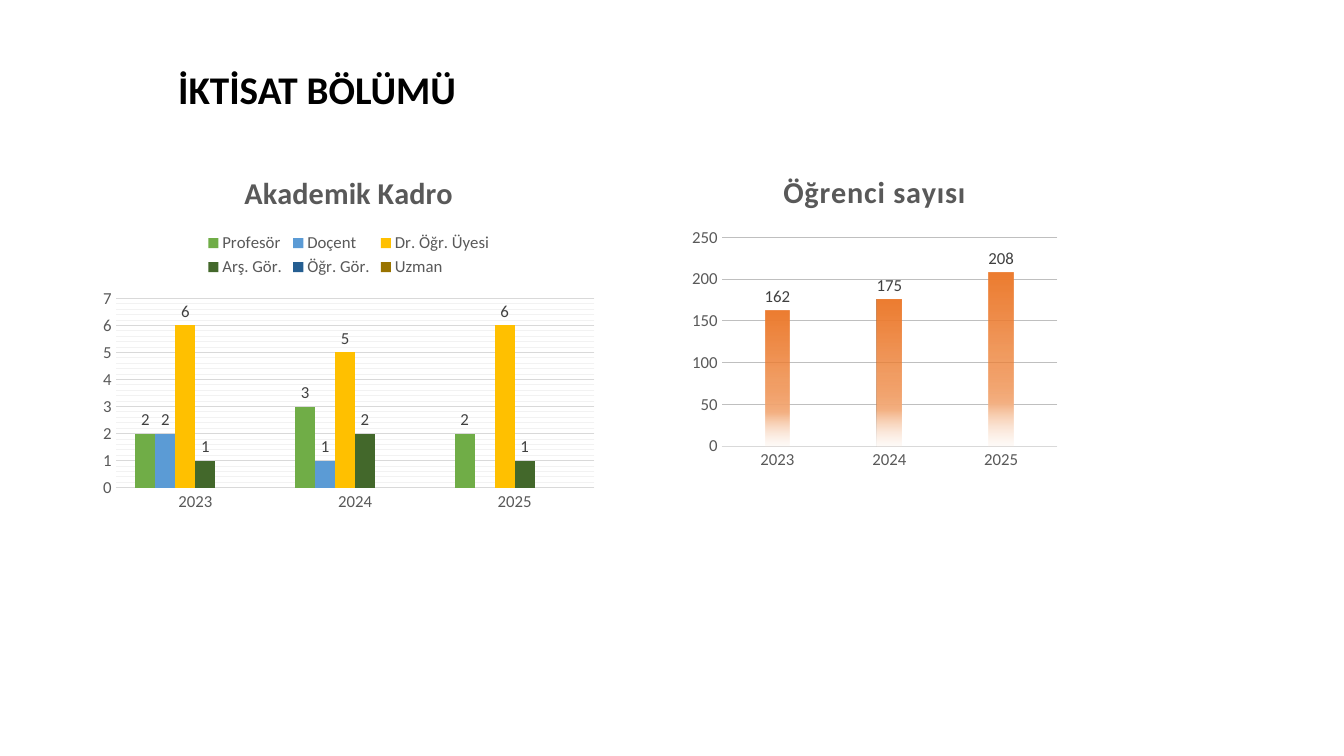
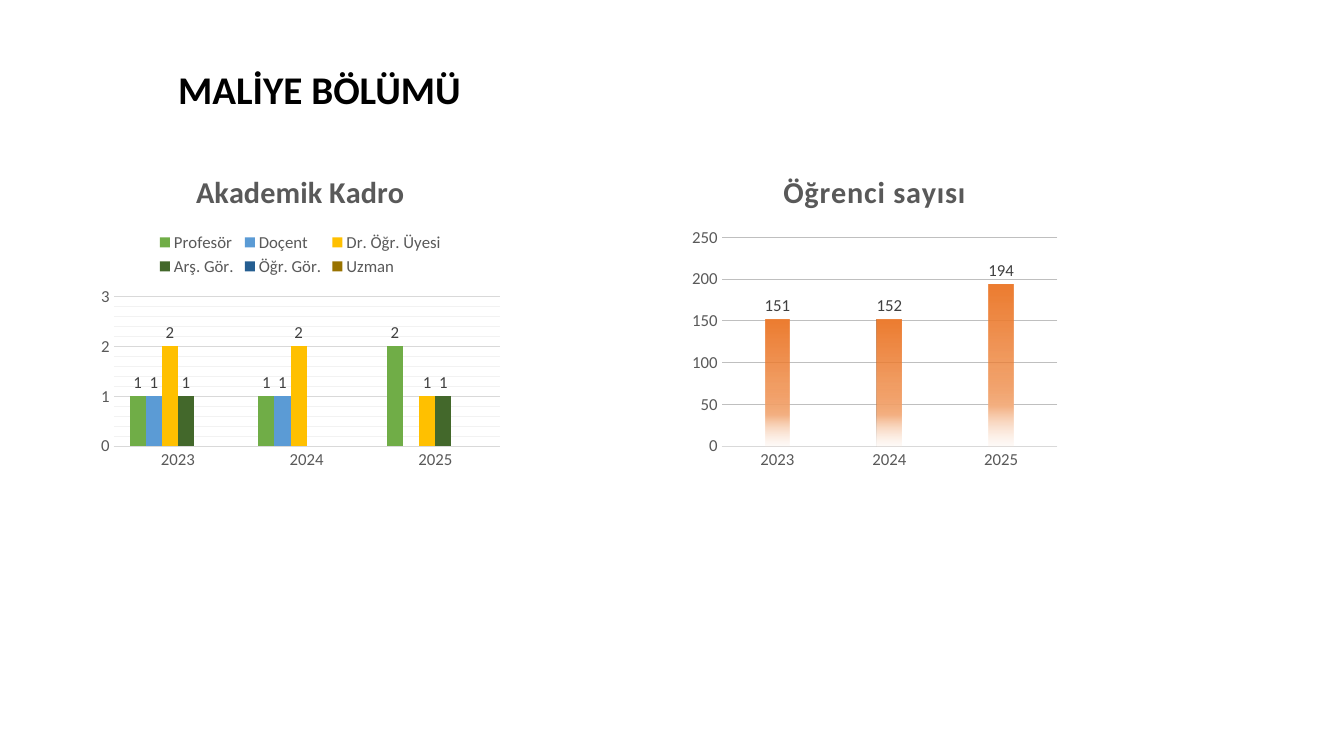
from pptx import Presentation
from pptx.chart.data import CategoryChartData as Data
from pptx.dml.color import RGBColor
from pptx.enum.chart import XL_CHART_TYPE as Kind
from pptx.enum.chart import XL_LABEL_POSITION as Place
from pptx.enum.chart import XL_LEGEND_POSITION as Side
from pptx.enum.chart import XL_TICK_MARK as Tick
from pptx.enum.text import MSO_ANCHOR as Anchor
from pptx.oxml import parse_xml
from pptx.oxml.ns import nsdecls, qn
from pptx.util import Cm, Pt

# Shared style
FONT = "Calibri"
BLACK, GREY, DARK = "000000", "595959", "404040"
RULE, FAINT, MID = "D9D9D9", "F2F2F2", "BFBFBF"
YEARS = ["2023", "2024", "2025"]
RANKS = {
    "Profesör": "70AD47",
    "Doçent": "5B9BD5",
    "Dr. Öğr. Üyesi": "FFC000",
    "Arş. Gör.": "43682B",
    "Öğr. Gör.": "255E91",
    "Uzman": "997300",
}
# Gradient stops: position, colour, opacity (all in percent)
FADE = [(0, "ED7D31", 100), (51, "ED7D31", 75),
        (75, "F4B183", 100), (100, "FBE5D6", 15)]
TOP = 3.86

# Slide content: the staff rows follow the order of RANKS
NONE = [None] * 3
PAGES = [
    {"title": "İKTİSAT BÖLÜMÜ", "size": (12.9, 9.22), "max": 7,
     "staff": [[2, 3, 2], [2, 1, None], [6, 5, 6], [1, 2, 1], NONE, NONE],
     "pupils": [162, 175, 208]},
    {"title": "MALİYE BÖLÜMÜ", "size": (10.46, 8.15), "max": 3,
     "staff": [[1, 1, 2], [1, 1, None], [2, 2, 1], [1, None, 1], NONE, NONE],
     "pupils": [151, 152, 194]},
]


def rgb(code):
    return RGBColor.from_string(code)


def style(font, size, color, bold=False):
    font.name, font.size, font.bold = FONT, Pt(size), bold
    font.color.rgb = rgb(color)


def rule(line, color):
    line.color.rgb = rgb(color)
    line.width = Pt(0.75)


def head(slide, text):
    box = slide.shapes.add_textbox(Cm(4.24), Cm(1.02), Cm(20.52), Cm(2.59))
    frame = box.text_frame
    frame.word_wrap = True
    frame.vertical_anchor = Anchor.MIDDLE
    frame.text = text
    para = frame.paragraphs[0]
    para.line_spacing = 0.9
    style(para.runs[0].font, 28, BLACK, True)


def bars(slide, left, size, title, rows, gap, top, step, grid):
    """Add a column chart; rows holds (name, values) pairs."""
    data = Data()
    data.categories = YEARS
    for name, vals in rows:
        data.add_series(name, vals)
    wide, high = size
    chart = slide.shapes.add_chart(
        Kind.COLUMN_CLUSTERED, Cm(left), Cm(TOP), Cm(wide), Cm(high), data
    ).chart
    style(chart.font, 10, BLACK)

    # Title
    frame = chart.chart_title.text_frame
    frame.text = title
    style(frame.paragraphs[0].runs[0].font, 21.6, GREY, True)
    chart.chart_title.include_in_layout = False

    # Axes
    for axis in (chart.category_axis, chart.value_axis):
        axis.major_tick_mark = axis.minor_tick_mark = Tick.NONE
        style(axis.tick_labels.font, 12, GREY)
    rule(chart.category_axis.format.line, RULE)
    axis = chart.value_axis
    axis.format.line.fill.background()
    axis.minimum_scale, axis.maximum_scale = 0, top
    axis.major_unit = step
    rule(axis.major_gridlines.format.line, grid)

    # Columns and their labels
    plot = chart.plots[0]
    plot.gap_width = gap
    plot.vary_by_categories = False
    for ser in plot.series:
        tags = ser.data_labels
        tags.show_value = True
        tags.position = Place.OUTSIDE_END
        style(tags.font, 12, DARK)
    return chart


def minor(axis, unit):
    """Show faint minor gridlines."""
    axis.minor_unit = unit
    axis.has_minor_gridlines = True
    axis._element.find(qn("c:minorGridlines")).append(parse_xml(
        f'<c:spPr {nsdecls("c", "a")}><a:ln w="{Pt(0.75)}"><a:solidFill>'
        f'<a:srgbClr val="{FAINT}"/></a:solidFill></a:ln></c:spPr>'))


def staff(slide, page):
    chart = bars(slide, 2.34, page["size"], "Akademik Kadro",
                 zip(RANKS, page["staff"]), 199, page["max"], 1, RULE)
    minor(chart.value_axis, 0.2)
    for ser, color in zip(chart.plots[0].series, RANKS.values()):
        ser.format.fill.solid()
        ser.format.fill.fore_color.rgb = rgb(color)
    chart.has_legend = True
    chart.legend.position = Side.TOP
    chart.legend.include_in_layout = False
    style(chart.legend.font, 12, GREY)


def fade(ser):
    fill = ser.format.fill
    fill.gradient()
    fill.gradient_angle = 270
    stops = ser._element.find(".//" + qn("a:gsLst"))
    for stop in list(stops):
        stops.remove(stop)
    for pos, color, alpha in FADE:
        stops.append(parse_xml(
            f'<a:gs {nsdecls("a")} pos="{pos * 1000}"><a:srgbClr val="{color}">'
            f'<a:alpha val="{alpha * 1000}"/></a:srgbClr></a:gs>'))


def pupils(slide, page):
    title = "Öğrenci sayısı"
    chart = bars(slide, 17.25, (9.58, 8.15), title,
                 [(title, page["pupils"])], 355, 250, 50, MID)
    chart.has_legend = False
    plot = chart.plots[0]
    plot.overlap = -70
    fade(plot.series[0])
    # Slightly wider letter spacing in the title
    run = chart.chart_title.text_frame.paragraphs[0].runs[0]
    run.font._element.set("spc", "50")


def main():
    deck = Presentation()
    deck.slide_width, deck.slide_height = Cm(33.87), Cm(19.05)
    for page in PAGES:
        slide = deck.slides.add_slide(deck.slide_layouts[6])
        head(slide, page["title"])
        staff(slide, page)
        pupils(slide, page)
    deck.save("out.pptx")


if __name__ == "__main__":
    main()
